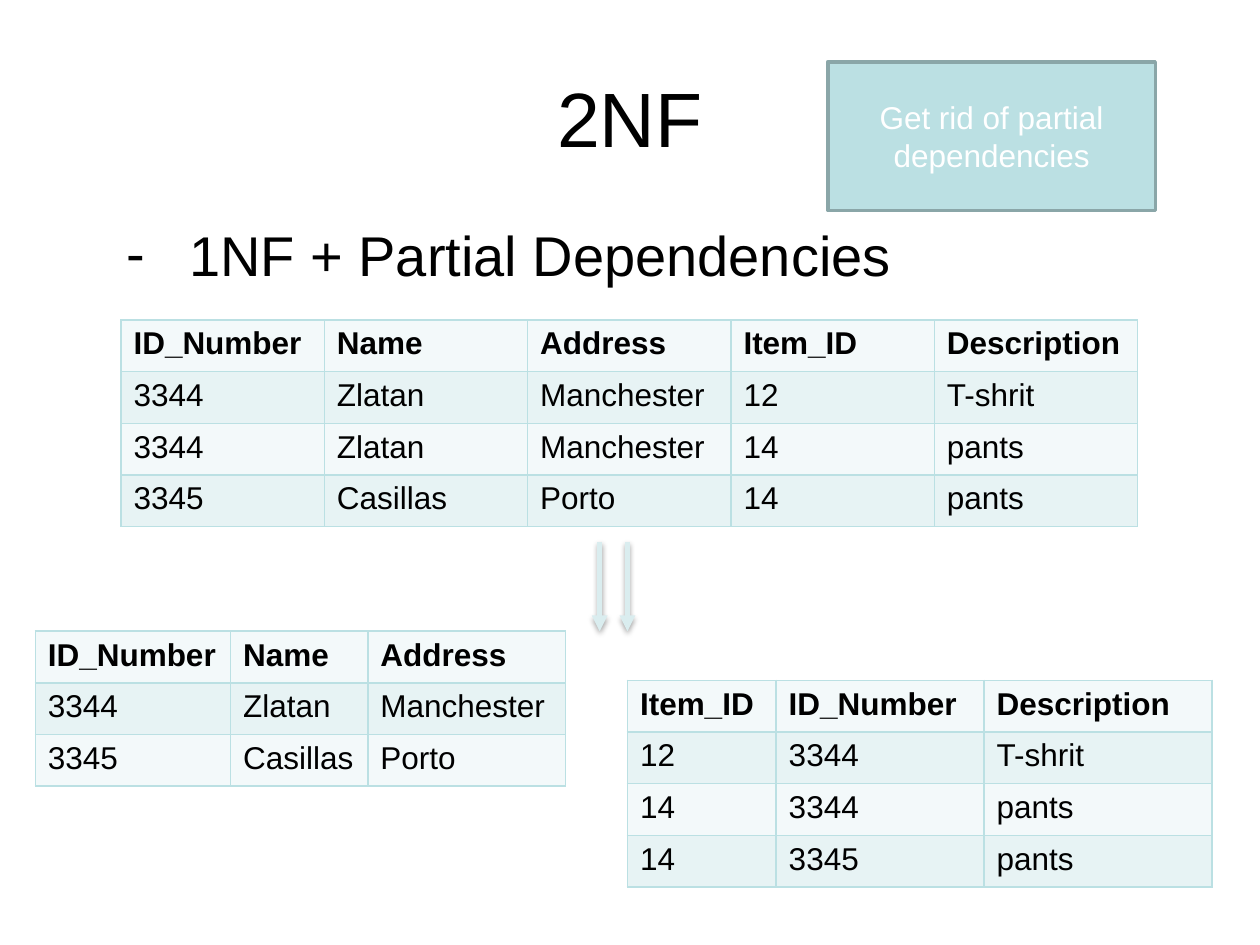
from dataclasses import dataclass

from lxml import etree
from pptx import Presentation
from pptx import util as u
from pptx.dml.color import RGBColor
from pptx.enum import shapes, text
from pptx.oxml import ns, parse_xml

HUES = {
    "ink": "000000", "white": "FFFFFF", "teal": "BBE0E3", "edge": "8AA6A8",
    "arrow": "DAEDEF", "odd": "F3F9FA", "even": "E7F3F4",
}
FONT = "Arial"
ROW = 0.41


@dataclass
class Grid:
    left: float
    top: float
    cols: list[float]
    rows: list[list[str]]


GRIDS = [
    Grid(0.96, 2.54, [1.614] * 5, [
        ["ID_Number", "Name", "Address", "Item_ID", "Description"],
        ["3344", "Zlatan", "Manchester", "12", "T-shrit"],
        ["3344", "Zlatan", "Manchester", "14", "pants"],
        ["3345", "Casillas", "Porto", "14", "pants"],
    ]),
    Grid(0.28, 5.01, [1.55, 1.09, 1.57], [
        ["ID_Number", "Name", "Address"],
        ["3344", "Zlatan", "Manchester"],
        ["3345", "Casillas", "Porto"],
    ]),
    Grid(4.98, 5.4, [1.18, 1.65, 1.81], [
        ["Item_ID", "ID_Number", "Description"],
        ["12", "3344", "T-shrit"],
        ["14", "3344", "pants"],
        ["14", "3345", "pants"],
    ]),
]


def hue(name: str) -> RGBColor:
    return RGBColor.from_string(HUES[name])


def write(para, words: str, size: int, tint: str = "ink", bold: bool = False) -> None:
    run = para.add_run()
    run.text = words
    run.font.name = FONT
    run.font.size = u.Pt(size)
    run.font.bold = bold
    run.font.color.rgb = hue(tint)


def place(shape, left: float, top: float, width: float, height: float) -> None:
    shape.left, shape.top = u.Inches(left), u.Inches(top)
    shape.width, shape.height = u.Inches(width), u.Inches(height)


def frame(cell) -> None:
    props = cell._tc.get_or_add_tcPr()
    for side in ("lnL", "lnR", "lnT", "lnB"):
        props.append(parse_xml(
            f'<a:{side} {ns.nsdecls("a")} w="12700"><a:solidFill>'
            f'<a:srgbClr val="{HUES["teal"]}"/></a:solidFill></a:{side}>'))


def draw_grid(slide, grid: Grid) -> None:
    table = slide.shapes.add_table(
        len(grid.rows), len(grid.cols), u.Inches(grid.left), u.Inches(grid.top),
        u.Inches(sum(grid.cols)), u.Inches(ROW * len(grid.rows))).table
    for col, width in zip(table.columns, grid.cols):
        col.width = u.Inches(width)
    for i, row in enumerate(grid.rows):
        table.rows[i].height = u.Inches(ROW)
        for j, words in enumerate(row):
            cell = table.cell(i, j)
            frame(cell)
            cell.fill.solid()
            cell.fill.fore_color.rgb = hue("even" if i % 2 else "odd")
            write(cell.text_frame.paragraphs[0], words, 18, bold=i == 0)


def draw_arrow(slide, x: float, top: float, end: float) -> None:
    arrow = slide.shapes.add_connector(
        shapes.MSO_CONNECTOR.STRAIGHT,
        u.Inches(x), u.Inches(top), u.Inches(x), u.Inches(end))
    arrow.line.color.rgb = hue("arrow")
    arrow.line.width = u.Pt(3)
    etree.SubElement(arrow.line._get_or_add_ln(), ns.qn("a:tailEnd"), type="triangle")
    arrow._element.spPr.append(parse_xml(
        f'<a:effectLst {ns.nsdecls("a")}>'
        '<a:outerShdw blurRad="40000" dist="23000" dir="5400000" rotWithShape="0">'
        f'<a:srgbClr val="{HUES["ink"]}"><a:alpha val="35000"/></a:srgbClr>'
        '</a:outerShdw></a:effectLst>'))


def draw_note(slide, words: str) -> None:
    note = slide.shapes.add_shape(shapes.MSO_SHAPE.RECTANGLE, 0, 0, 0, 0)
    place(note, 6.57, 0.49, 2.6, 1.18)
    note.shadow.inherit = False
    note.fill.solid()
    note.fill.fore_color.rgb = hue("teal")
    note.line.color.rgb = hue("edge")
    note.line.width = u.Pt(2)
    note.text_frame.vertical_anchor = text.MSO_ANCHOR.MIDDLE
    para = note.text_frame.paragraphs[0]
    para.alignment = text.PP_ALIGN.CENTER
    write(para, words, 18, "white")


def draw_list(body, words: str) -> None:
    place(body, 0.9, 1.7, 6.33, 1.18)
    body.text_frame.word_wrap = False
    body.text_frame.vertical_anchor = text.MSO_ANCHOR.TOP
    para = body.text_frame.paragraphs[0]
    para.space_before = u.Pt(3)
    props = para._p.get_or_add_pPr()
    props.set("marL", str(u.Inches(0.5)))
    props.set("indent", str(-u.Inches(0.5)))
    etree.SubElement(props, ns.qn("a:buFont"), typeface=FONT)
    etree.SubElement(props, ns.qn("a:buChar"), char="-")
    write(para, words, 32)


def main() -> None:
    deck = Presentation()
    deck.slide_width, deck.slide_height = u.Inches(10), u.Inches(7.5)
    slide = deck.slides.add_slide(deck.slide_layouts[1])

    # Title and list
    title, body = slide.placeholders
    place(title, 0.5, 0.3, 9, 1.25)
    title.text_frame.vertical_anchor = text.MSO_ANCHOR.MIDDLE
    para = title.text_frame.paragraphs[0]
    para.alignment = text.PP_ALIGN.CENTER
    write(para, "2NF", 44)
    draw_list(body, "1NF + Partial Dependencies")

    # Table before the split and the two after it
    for grid in GRIDS:
        draw_grid(slide, grid)

    # Arrows and note
    for x in (4.76, 4.98):
        draw_arrow(slide, x, 4.3, 5.01)
    draw_note(slide, "Get rid of partial dependencies")

    deck.save("out.pptx")


if __name__ == "__main__":
    main()
